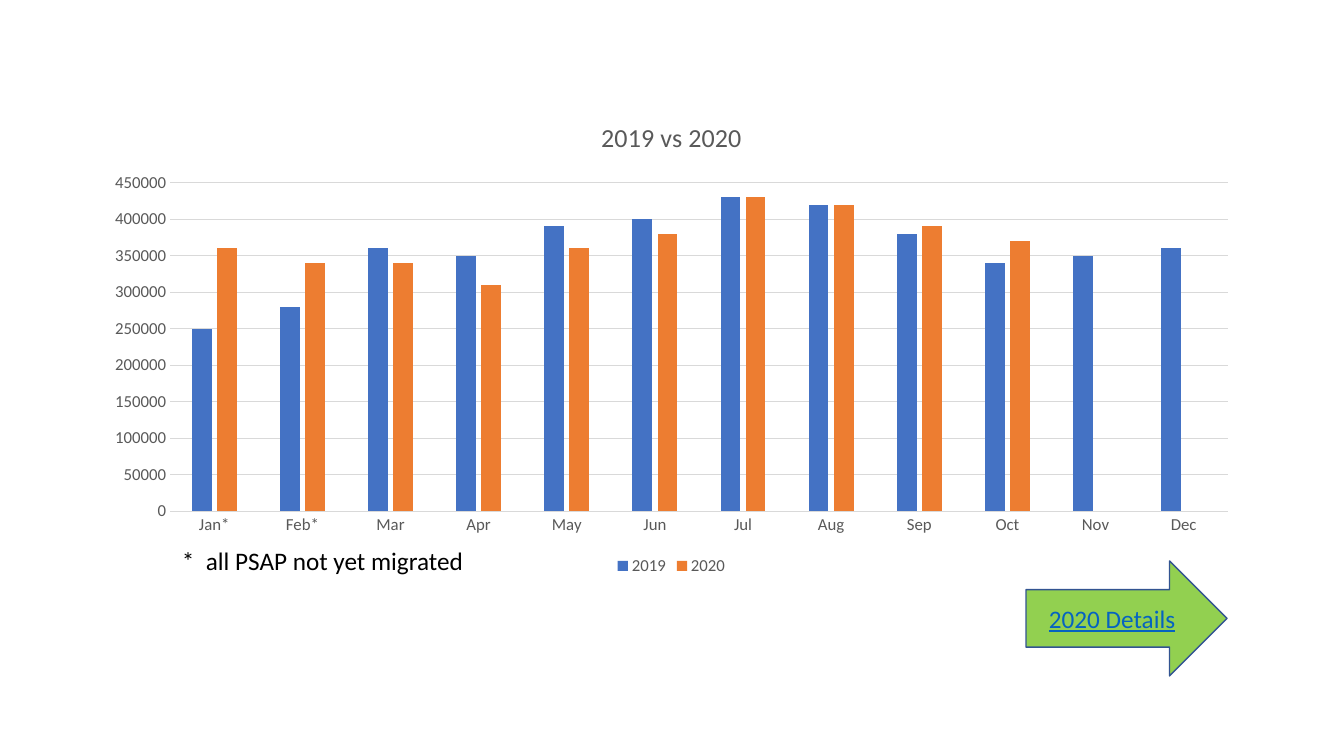
from pptx import Presentation
from pptx import util as u
from pptx.chart import data as cd
from pptx.dml import color as col
from pptx.enum import chart as ch
from pptx.enum import shapes, text

TITLE = "2019 vs 2020"
MONTHS = ["Jan*", "Feb*", "Mar", "Apr", "May", "Jun",
          "Jul", "Aug", "Sep", "Oct", "Nov", "Dec"]
CALLS = {
    "2019": [250000, 280000, 360000, 350000, 390000, 400000,
             430000, 420000, 380000, 340000, 350000, 360000],
    "2020": [360000, 340000, 340000, 310000, 360000, 380000,
             430000, 420000, 390000, 370000, None, None],
}
NOTE = ["*", "\t", "all PSAP not yet migrated"]
LINK = "2020 Details"

# left, top, width, height in px
SIZE = (1344, 756)
CHART = (92, 100, 1159, 480)
NOTE_BOX = (172, 540, 365, 40)
ARROW = (1026, 561, 201, 115)
INDENT = 24


class Theme:
    font = "Calibri"
    bars = ["4472C4", "ED7D31"]
    grey, grid, black = "595959", "D9D9D9", "000000"
    green, edge, link = "92D050", "325491", "0563C1"
    title, body, label = 18.6, 18, 12
    thin, rim = 0.75, 1


def px(n):
    return u.Emu(round(n * 914400 / 100.8))


def place(box):
    return [px(n) for n in box]


def rgb(code):
    return col.RGBColor.from_string(code)


def style(font, size, color):
    font.name, font.size, font.bold = Theme.font, u.Pt(size), False
    font.color.rgb = rgb(color)


def stroke(line, color, width):
    line.color.rgb = rgb(color)
    line.width = u.Pt(width)


def add_run(para, words, size, color):
    run = para.add_run()
    run.text = words
    style(run.font, size, color)
    return run


def add_chart(slide):
    data = cd.CategoryChartData()
    data.categories = MONTHS
    for name, vals in CALLS.items():
        data.add_series(name, vals)
    chart = slide.shapes.add_chart(
        ch.XL_CHART_TYPE.COLUMN_CLUSTERED, *place(CHART), data).chart
    style(chart.font, Theme.label, Theme.grey)

    chart.has_title = True
    add_run(chart.chart_title.text_frame.paragraphs[0],
            TITLE, Theme.title, Theme.grey)
    chart.chart_title.include_in_layout = False

    chart.has_legend = True
    chart.legend.position = ch.XL_LEGEND_POSITION.BOTTOM
    chart.legend.include_in_layout = False
    style(chart.legend.font, Theme.label, Theme.grey)

    plot = chart.plots[0]
    plot.gap_width, plot.overlap = 219, -27
    plot.vary_by_categories = False
    for bar, color in zip(plot.series, Theme.bars):
        bar.format.fill.solid()
        bar.format.fill.fore_color.rgb = rgb(color)
        bar.invert_if_negative = False

    months, scale = chart.category_axis, chart.value_axis
    for axis in (months, scale):
        axis.major_tick_mark = axis.minor_tick_mark = ch.XL_TICK_MARK.NONE
        style(axis.tick_labels.font, Theme.label, Theme.grey)
    stroke(months.format.line, Theme.grid, Theme.thin)
    scale.format.line.fill.background()
    scale.minimum_scale, scale.maximum_scale = 0, 450000
    scale.major_unit = 50000
    scale.tick_labels.number_format = "General"
    scale.tick_labels.number_format_is_linked = False
    scale.has_major_gridlines = True
    stroke(scale.major_gridlines.format.line, Theme.grid, Theme.thin)


def add_note(slide):
    """Footnote with its star hung left of the wording."""
    frame = slide.shapes.add_textbox(*place(NOTE_BOX)).text_frame
    frame.word_wrap = True
    para = frame.paragraphs[0]
    props = para._p.get_or_add_pPr()
    props.set("marL", str(px(INDENT)))
    props.set("indent", str(-px(INDENT)))
    for words in NOTE:
        add_run(para, words, Theme.body, Theme.black)


def add_arrow(slide):
    arrow = slide.shapes.add_shape(
        shapes.MSO_SHAPE.RIGHT_ARROW, *place(ARROW))
    arrow.shadow.inherit = False
    arrow.fill.solid()
    arrow.fill.fore_color.rgb = rgb(Theme.green)
    stroke(arrow.line, Theme.edge, Theme.rim)
    frame = arrow.text_frame
    frame.word_wrap = True
    frame.vertical_anchor = text.MSO_ANCHOR.MIDDLE
    para = frame.paragraphs[0]
    para.alignment = text.PP_ALIGN.CENTER
    add_run(para, LINK, Theme.body, Theme.link).font.underline = True


def main():
    deck = Presentation()
    deck.slide_width, deck.slide_height = place(SIZE)
    slide = deck.slides.add_slide(deck.slide_layouts[6])
    add_chart(slide)
    add_note(slide)
    add_arrow(slide)
    deck.save("out.pptx")


if __name__ == "__main__":
    main()
